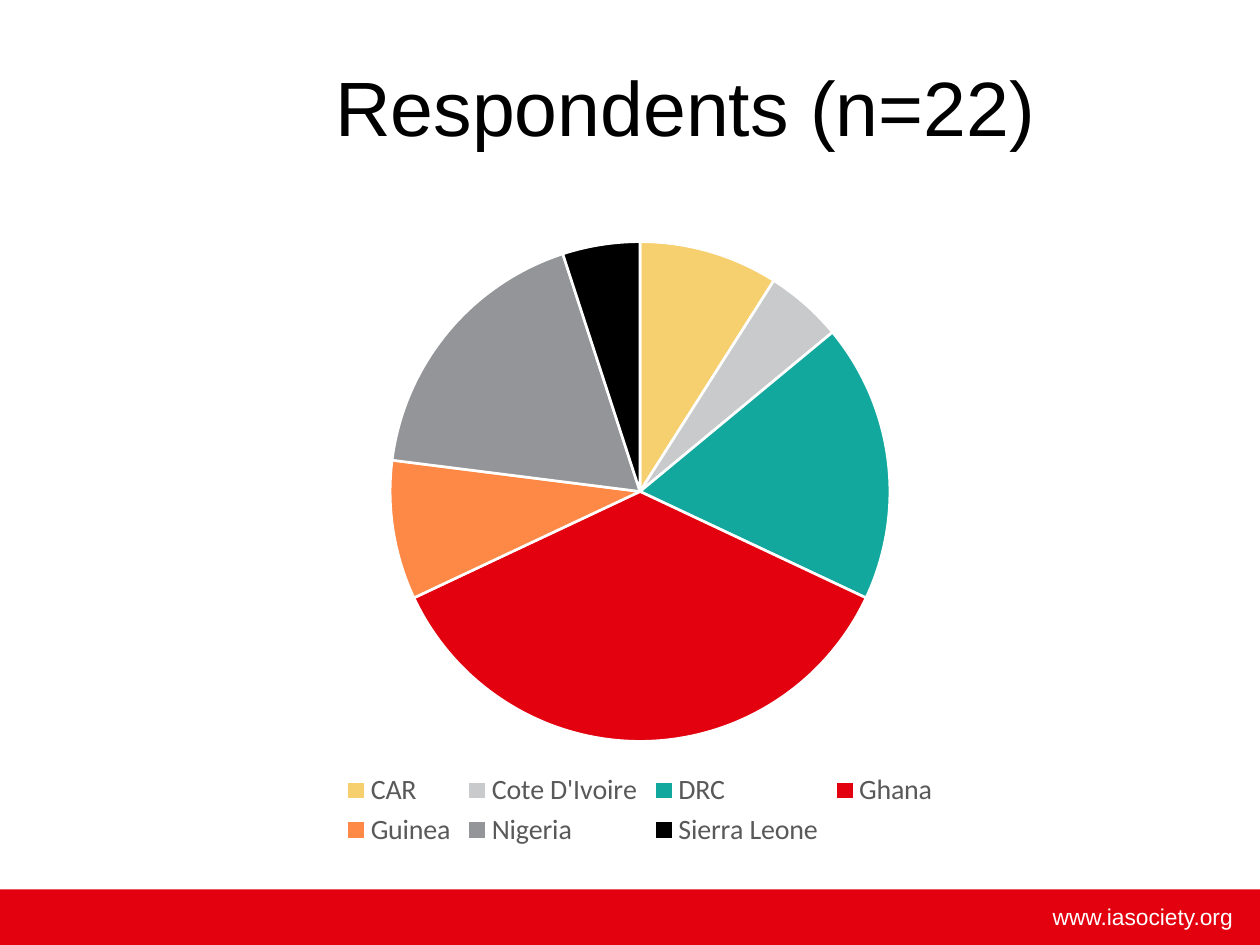
from pptx import Presentation
from pptx import util as u
from pptx.chart.data import CategoryChartData
from pptx.dml.color import RGBColor
from pptx.enum import chart as ch, shapes, text

COLORS = {
    "red": "E3000F", "white": "FFFFFF", "black": "000000", "label": "595959",
    "CAR": "F6D06E", "Cote D'Ivoire": "C9CACB", "DRC": "13A89E", "Ghana": "E3000F",
    "Guinea": "FE8946", "Nigeria": "939598", "Sierra Leone": "000000",
}
SHARES = {
    "CAR": 9, "Cote D'Ivoire": 5, "DRC": 18, "Ghana": 36,
    "Guinea": 9, "Nigeria": 18, "Sierra Leone": 5,
}

deck = Presentation()
deck.slide_width, deck.slide_height = u.Inches(10), u.Inches(7.5)
page = deck.slides.add_slide(deck.slide_layouts[6])


def area(left, top, width, height):
    return [u.Inches(length) for length in (left, top, width, height)]


def style(font, size, color, name="Arial"):
    font.size, font.name = u.Pt(size), name
    font.color.rgb = RGBColor.from_string(COLORS[color])


footer = page.shapes.add_shape(shapes.MSO_SHAPE.RECTANGLE, *area(0, 7.06, 10, 0.44))
footer.shadow.inherit = False
footer.fill.solid()
footer.fill.fore_color.rgb = RGBColor.from_string(COLORS["red"])
footer.line.fill.background()

labels = [
    ("www.iasociety.org", (6.57, 7.11, 3.31, 0.32), 13, "white", text.PP_ALIGN.RIGHT),
    ("Respondents (n=22)", (1.38, 0.21, 8.12, 1.25), 44, "black", text.PP_ALIGN.CENTER),
]
for wording, place, size, color, align in labels:
    box = page.shapes.add_textbox(*area(*place))
    box.text_frame.word_wrap = True
    box.text_frame.vertical_anchor = text.MSO_ANCHOR.MIDDLE
    box.text_frame.text = wording
    para = box.text_frame.paragraphs[0]
    para.alignment = align
    style(para.runs[0].font, size, color)

data = CategoryChartData()
data.categories = list(SHARES)
data.add_series("Series 1", list(SHARES.values()))
pie = page.shapes.add_chart(ch.XL_CHART_TYPE.PIE, *area(1.06, 1.78, 8.04, 4.99), data).chart
style(pie.font, 10, "black", "Calibri")
pie.has_title = False
pie.has_legend = True
pie.legend.position = ch.XL_LEGEND_POSITION.BOTTOM
pie.legend.include_in_layout = False
style(pie.legend.font, 16, "label", "Calibri")

plot = pie.plots[0]
plot.vary_by_categories = True
for index, country in enumerate(SHARES):
    wedge = plot.series[0].points[index].format
    wedge.fill.solid()
    wedge.fill.fore_color.rgb = RGBColor.from_string(COLORS[country])
    wedge.line.color.rgb = RGBColor.from_string(COLORS["white"])
    wedge.line.width = u.Pt(1.5)

deck.save("out.pptx")
